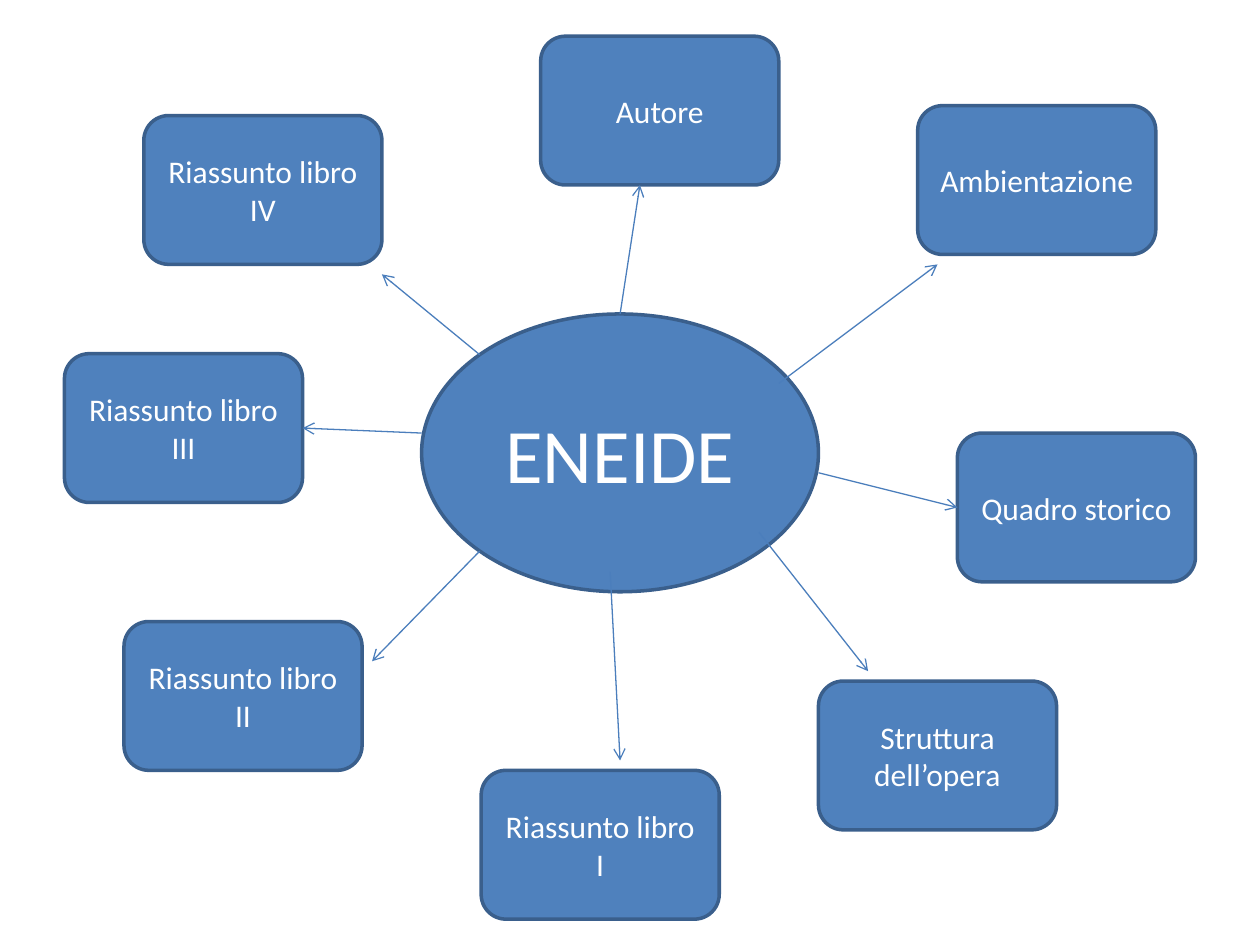
from dataclasses import dataclass

from lxml.etree import SubElement
from pptx import Presentation
from pptx.dml.color import RGBColor
from pptx.enum.shapes import MSO_CONNECTOR as Connector, MSO_SHAPE as Shape
from pptx.enum.text import MSO_ANCHOR as Anchor, PP_ALIGN as Align
from pptx.oxml.ns import qn
from pptx.util import Cm, Pt


@dataclass(frozen=True)
class Theme:
    font: str = "Calibri"
    fill: str = "4F81BD"
    outline: str = "3A5F8C"
    arrow: str = "4B7EBC"
    text: str = "FFFFFF"
    hub_size: int = 44
    topic_size: int = 18
    outline_width: float = 2
    arrow_width: float = 0.75


@dataclass(frozen=True)
class Box:
    left: float
    top: float
    width: float
    height: float

    def point(self, offset):
        """Slide position of an offset from the box's top left corner."""
        return self.left + offset[0], self.top + offset[1]


THEME = Theme()
HUB = Box(8.5, 6.33, 8, 5.6)
TOPIC_SIZE = (4.8, 3)

# Label, topic corner on the slide, arrow start in the hub, arrow end in the topic (cm)
TOPICS = [
    ("Riassunto libro IV", (2.9, 2.33), (1.17, 0.82), (4.8, 3.2)),
    ("Riassunto libro III", (1.3, 7.13), (0, 2.4), (4.8, 1.5)),
    ("Riassunto libro\nII", (2.5, 12.53), (1.17, 4.78), (5, 0.8)),
    ("Riassunto libro I", (9.7, 15.53), (3.8, 5.2), (2.8, -0.2)),
    ("Struttura dell’opera", (16.5, 13.73), (6.8, 4.4), (1, -0.2)),
    ("Quadro storico", (19.3, 8.73), (8, 3.2), (0, 1.5)),
    ("Autore", (10.9, 0.73), (4, 0), (2, 3)),
    ("Ambientazione", (18.5, 2.13), (7.2, 1.4), (0.4, 3.2)),
]


def write_text(frame, text, *, size, color=THEME.text, align=Align.CENTER):
    frame.word_wrap = True
    frame.vertical_anchor = Anchor.MIDDLE
    frame.text = text
    for paragraph in frame.paragraphs:
        paragraph.alignment = align
        font = paragraph.runs[0].font
        font.name = THEME.font
        font.size = Pt(size)
        font.color.rgb = RGBColor.from_string(color)


def add_bubble(slide, box, kind, label, size):
    bubble = slide.shapes.add_shape(
        kind, Cm(box.left), Cm(box.top), Cm(box.width), Cm(box.height))
    bubble.shadow.inherit = False
    bubble.fill.solid()
    bubble.fill.fore_color.rgb = RGBColor.from_string(THEME.fill)
    bubble.line.color.rgb = RGBColor.from_string(THEME.outline)
    bubble.line.width = Pt(THEME.outline_width)
    write_text(bubble.text_frame, label, size=size)


def add_arrow(slide, start, end):
    arrow = slide.shapes.add_connector(
        Connector.STRAIGHT, *(Cm(length) for length in (*start, *end)))
    arrow.line.color.rgb = RGBColor.from_string(THEME.arrow)
    arrow.line.width = Pt(THEME.arrow_width)
    SubElement(arrow.line._get_or_add_ln(), qn("a:tailEnd"), type="arrow")
    SubElement(arrow._element.spPr, qn("a:effectLst"))


def add_mind_map(slide, hub):
    add_bubble(slide, hub, Shape.OVAL, "ENEIDE", THEME.hub_size)
    for label, corner, start, end in TOPICS:
        topic = Box(*corner, *TOPIC_SIZE)
        add_bubble(slide, topic, Shape.FLOWCHART_ALTERNATE_PROCESS, label,
                   THEME.topic_size)
        add_arrow(slide, hub.point(start), topic.point(end))


def main():
    deck = Presentation()
    deck.slide_width, deck.slide_height = Cm(25.4), Cm(19.05)
    slide = deck.slides.add_slide(deck.slide_layouts[6])
    add_mind_map(slide, HUB)
    deck.save("out.pptx")


if __name__ == "__main__":
    main()
